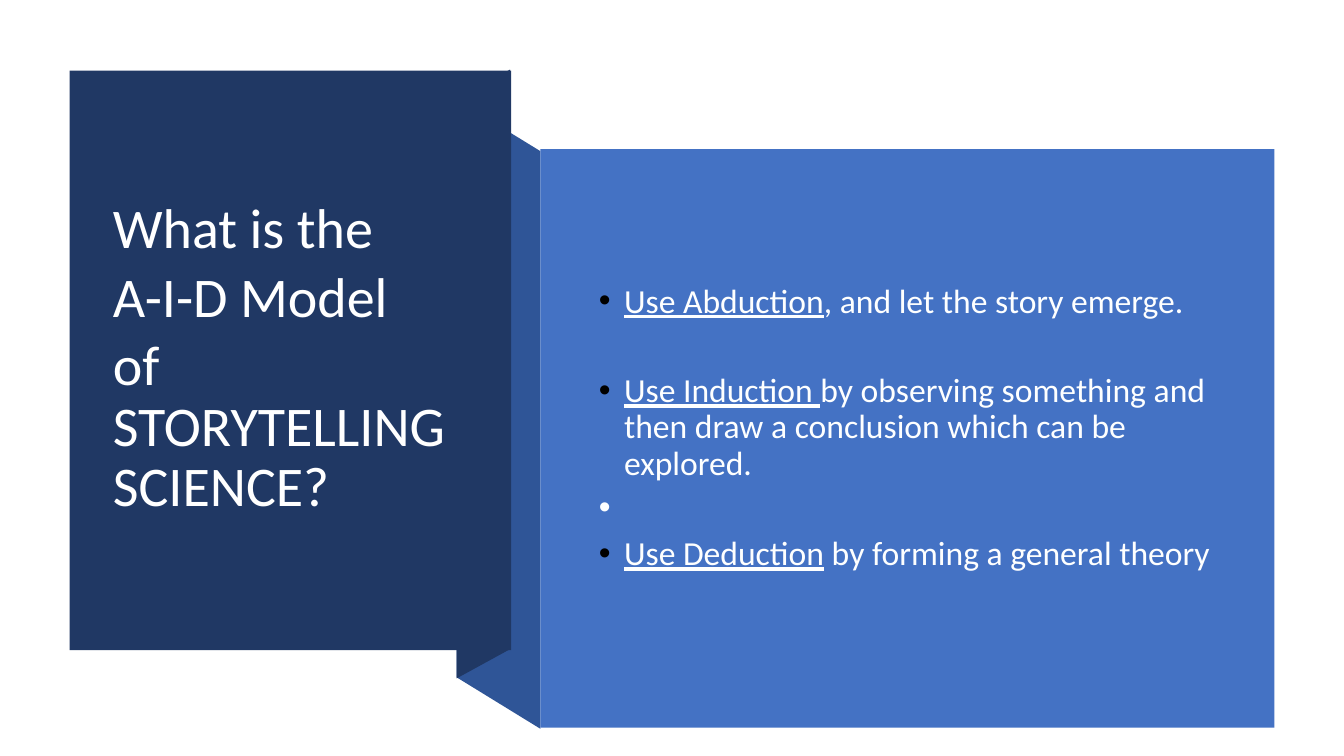
import dataclasses

import pptx
import pptx.dml.color
import pptx.enum.shapes
import pptx.enum.text
import pptx.oxml
import pptx.oxml.ns
import pptx.util
from pptx.util import Inches


@dataclasses.dataclass(frozen=True)
class Theme:
    font: str = "Calibri"
    title_size: int = 40
    body_size: int = 24
    white: str = "FFFFFF"
    text: str = "FEFFFF"
    bullet: str = "000000"
    navy: str = "203864"
    fold: str = "2F5597"
    blue: str = "4472C4"


THEME = Theme()

TITLE_LINES = ["What is the", "A-I-D Model", "of STORYTELLING SCIENCE?"]

# Underlined words, remaining words, space before in points, bullet colour
STEPS = [
    ("Use Abduction", ", and let the story emerge.", 6.4, THEME.bullet),
    ("Use Induction ",
     "by observing something and then draw a conclusion which can be explored.",
     38, THEME.bullet),
    ("", " ", 6.4, THEME.text),
    ("Use Deduction", " by forming a general theory", 6.4, THEME.bullet),
]


def rgb(color):
    return pptx.dml.color.RGBColor.from_string(color)


def paint(shape, color):
    """Give a shape a plain fill without line or shadow."""
    shape.shadow.inherit = False
    shape.fill.solid()
    shape.fill.fore_color.rgb = rgb(color)
    shape.line.fill.background()


def add_panel(page, left, top, width, height, color):
    panel = page.shapes.add_shape(
        pptx.enum.shapes.MSO_SHAPE.RECTANGLE,
        Inches(left), Inches(top), Inches(width), Inches(height))
    paint(panel, color)


def add_fold(page, corners, color):
    """Draw one slanted side of the folded ribbon."""
    points = [(Inches(x), Inches(y)) for x, y in corners]
    builder = page.shapes.build_freeform(*points[0], scale=1.0)
    builder.add_line_segments(points[1:], close=True)
    paint(builder.convert_to_shape(), color)


def place_text(page, box, left, top, width, height):
    """Move a placeholder to its panel, in front of the shapes."""
    box.left, box.top = Inches(left), Inches(top)
    box.width, box.height = Inches(width), Inches(height)
    frame = box.text_frame
    frame.word_wrap = True
    frame.auto_size = pptx.enum.text.MSO_AUTO_SIZE.NONE
    frame.vertical_anchor = pptx.enum.text.MSO_ANCHOR.MIDDLE
    page.shapes._spTree.append(box._element)
    return frame


def add_bullet(para, color):
    properties = para._p.get_or_add_pPr()
    properties.set("marL", str(Inches(0.38)))
    properties.set("indent", str(Inches(-0.25)))
    namespace = pptx.oxml.ns.nsdecls("a")
    for markup in (
        f'<a:buClr {namespace}><a:srgbClr val="{color}"/></a:buClr>',
        f'<a:buFont {namespace} typeface="Arial"/>',
        f'<a:buChar {namespace} char="•"/>',
    ):
        properties.append(pptx.oxml.parse_xml(markup))


def write_para(frame, index, spans, *, size, color, before=0, after=0,
               bullet=None):
    """Write one paragraph from (text, underlined) spans."""
    para = frame.paragraphs[0] if index == 0 else frame.add_paragraph()
    para.alignment = pptx.enum.text.PP_ALIGN.LEFT
    para.line_spacing = 0.9
    para.space_before = pptx.util.Pt(before)
    para.space_after = pptx.util.Pt(after)
    if bullet:
        add_bullet(para, bullet)
    for text, underlined in spans:
        if text:
            span = para.add_run()
            span.text = text
            span.font.name = THEME.font
            span.font.size = pptx.util.Pt(size)
            span.font.color.rgb = rgb(color)
            span.font.underline = underlined


def main():
    deck = pptx.Presentation()
    deck.slide_width, deck.slide_height = Inches(13.33), Inches(7.5)
    page = deck.slides.add_slide(deck.slide_layouts[1])
    title, body = page.placeholders

    # Backdrop and folded ribbon
    add_panel(page, 0, 0, 13.33, 7.5, THEME.white)
    add_fold(page, [(5.36, 7.23), (4.53, 6.72), (4.53, 0.99), (5.36, 1.5)],
             THEME.fold)
    add_fold(page, [(5.06, 6.44), (4.53, 6.73), (4.53, 0.98), (5.06, 0.69)],
             THEME.navy)
    add_panel(page, 0.69, 0.7, 4.38, 5.75, THEME.navy)
    add_panel(page, 5.36, 1.48, 7.28, 5.74, THEME.blue)

    # Title
    frame = place_text(page, title, 1.02, 1.07, 3.71, 4.99)
    for index, line in enumerate(TITLE_LINES):
        write_para(frame, index, [(line, False)], size=THEME.title_size,
                   color=THEME.white, after=6)

    # Steps of the model
    frame = place_text(page, body, 5.71, 1.88, 6.51, 4.74)
    for index, (lead, rest, before, bullet) in enumerate(STEPS):
        write_para(frame, index, [(lead, True), (rest, False)],
                   size=THEME.body_size, color=THEME.text, before=before,
                   bullet=bullet)

    deck.save("out.pptx")


if __name__ == "__main__":
    main()
